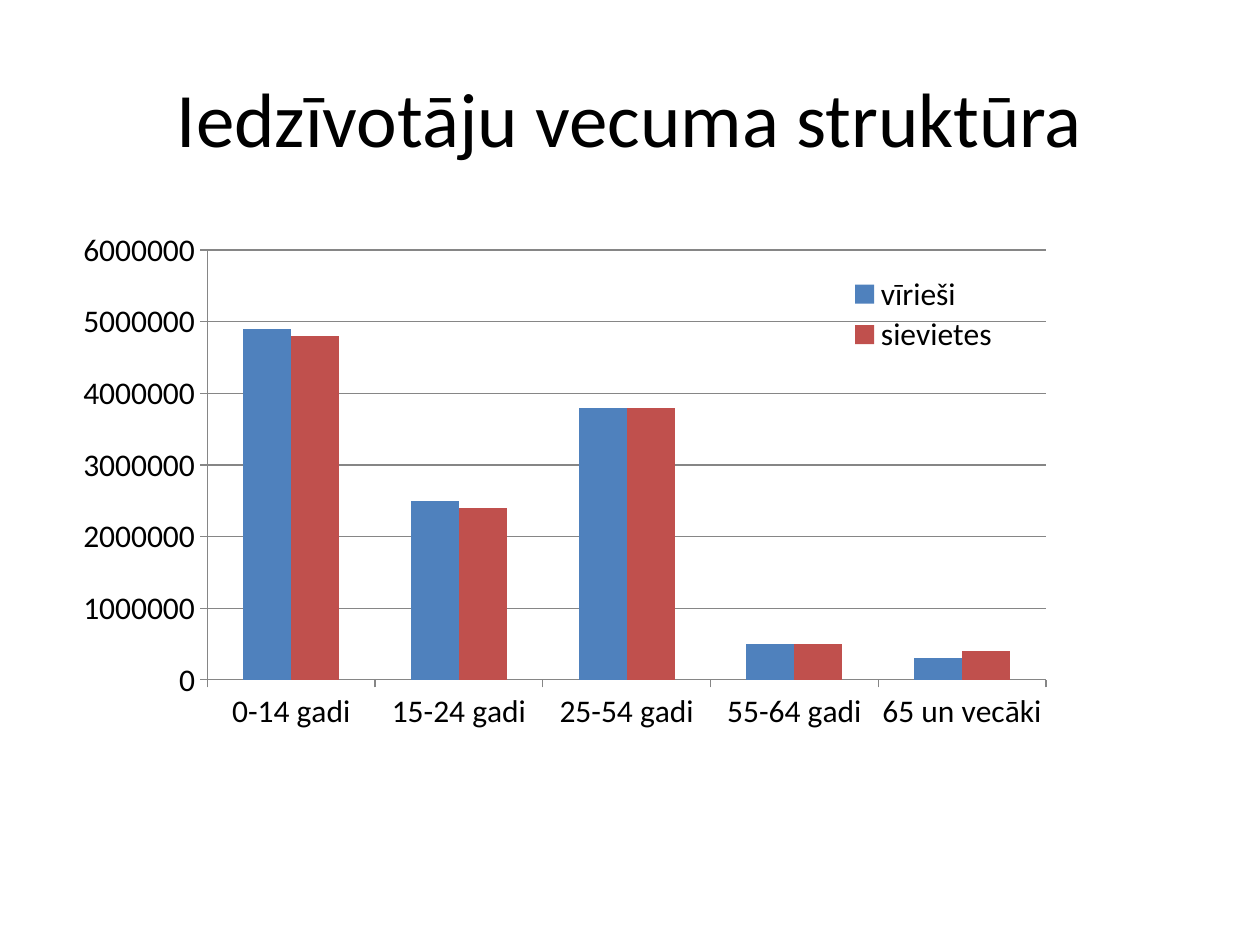
from dataclasses import dataclass

from lxml.etree import SubElement
from pptx import Presentation
from pptx.chart.data import CategoryChartData
from pptx.dml.color import RGBColor
from pptx.enum.chart import XL_CHART_TYPE, XL_LEGEND_POSITION, XL_TICK_MARK
from pptx.enum.text import MSO_ANCHOR, PP_ALIGN
from pptx.oxml import parse_xml
from pptx.oxml.ns import nsdecls, qn
from pptx.util import Cm, Pt


@dataclass(frozen=True)
class Theme:
    font: str = "Calibri"
    heading_size: Pt = Pt(44)
    chart_size: Pt = Pt(18)
    text: RGBColor = RGBColor(0x00, 0x00, 0x00)
    rule: RGBColor = RGBColor(0x86, 0x86, 0x86)
    men: RGBColor = RGBColor(0x4F, 0x81, 0xBD)
    women: RGBColor = RGBColor(0xC0, 0x50, 0x4D)


def percent_layout(x, y, w, h, inner=False):
    layout = parse_xml(f"<c:layout {nsdecls('c')}><c:manualLayout/></c:layout>")
    settings = {"layoutTarget": "inner"} if inner else {}
    settings |= {"xMode": "edge", "yMode": "edge"}
    settings |= {"x": x / 100, "y": y / 100, "w": w / 100, "h": h / 100}
    for tag, value in settings.items():
        SubElement(layout[0], qn(f"c:{tag}")).set("val", str(value))
    return layout


theme = Theme()
presentation = Presentation()
presentation.slide_width = Cm(25.4)
presentation.slide_height = Cm(19.05)
slide = presentation.slides.add_slide(presentation.slide_layouts[6])

heading = slide.shapes.add_textbox(Cm(1.27), Cm(0.76), Cm(22.86), Cm(3.18)).text_frame
heading.word_wrap = True
heading.vertical_anchor = MSO_ANCHOR.MIDDLE
heading_line = heading.paragraphs[0]
heading_line.alignment = PP_ALIGN.CENTER
heading_run = heading_line.add_run()
heading_run.text = "Iedzīvotāju vecuma struktūra"
heading_run.font.name = theme.font
heading_run.font.size = theme.heading_size
heading_run.font.color.rgb = theme.text

population = CategoryChartData()
population.categories = ["0-14 gadi", "15-24 gadi", "25-54 gadi", "55-64 gadi", "65 un vecāki"]
population.add_series("vīrieši", [4900000, 2500000, 3800000, 500000, 300000])
population.add_series("sievietes", [4800000, 2400000, 3800000, 500000, 400000])

age_chart = slide.shapes.add_chart(
    XL_CHART_TYPE.COLUMN_CLUSTERED, Cm(1.27), Cm(4.45), Cm(20.22), Cm(10.49), population
).chart
age_chart.has_title = False
age_chart.font.name = theme.font
age_chart.font.size = theme.chart_size
age_chart.font.color.rgb = theme.text

columns = age_chart.plots[0]
columns.vary_by_categories = False
columns.gap_width = 150
columns.overlap = 0
for group, color in zip(columns.series, (theme.men, theme.women)):
    group.format.fill.solid()
    group.format.fill.fore_color.rgb = color

ages, people = age_chart.category_axis, age_chart.value_axis
people.minimum_scale = 0
people.maximum_scale = 6000000
people.major_unit = 1000000
people.has_major_gridlines = True
for axis in (ages, people):
    axis.major_tick_mark = XL_TICK_MARK.OUTSIDE
    axis.minor_tick_mark = XL_TICK_MARK.NONE
for rule in (ages, people, people.major_gridlines):
    rule.format.line.color.rgb = theme.rule
    rule.format.line.width = Pt(0.75)

age_chart.has_legend = True
legend = age_chart.legend
legend.position = XL_LEGEND_POSITION.RIGHT
legend.include_in_layout = True

plot_area = columns._element.getparent()
legend_xml = legend._element
for area in (plot_area, legend_xml):
    for automatic in area.findall(qn("c:layout")):
        area.remove(automatic)
plot_area.insert(0, percent_layout(14.4, 5.65, 83.6, 82.6, inner=True))
legend_xml.find(qn("c:legendPos")).addnext(percent_layout(77.8, 10, 16, 16))

presentation.save("out.pptx")
